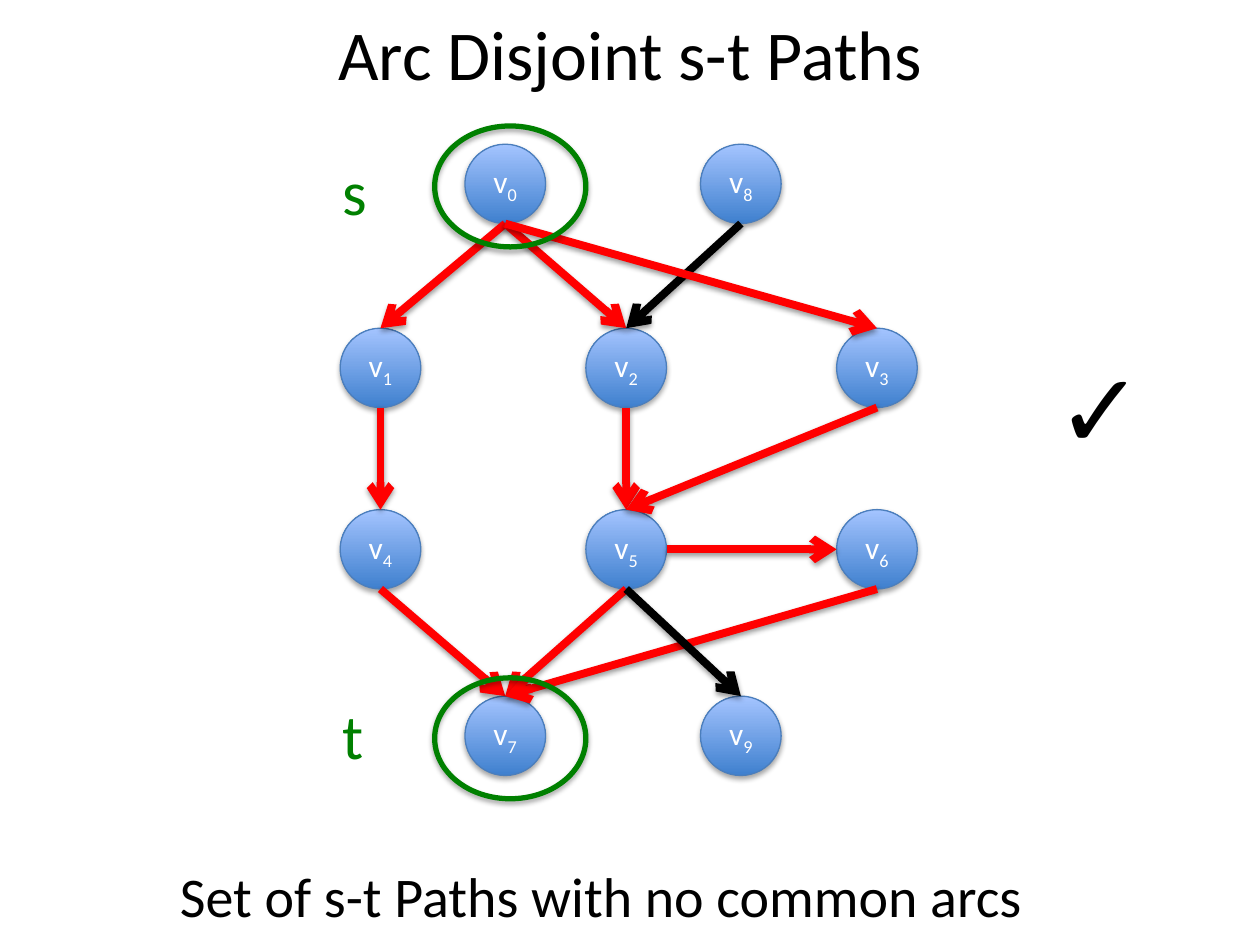
from lxml import etree
from pptx import Presentation
from pptx.dml.color import RGBColor
from pptx.enum import shapes, text
from pptx.oxml.ns import qn
from pptx.util import Inches, Pt

BLACK = RGBColor(0x00, 0x00, 0x00)
WHITE = RGBColor(0xFF, 0xFF, 0xFF)
RED = RGBColor(0xFF, 0x00, 0x00)
GREEN = RGBColor(0x00, 0x80, 0x00)
NODE_DARK = RGBColor(0x3F, 0x80, 0xCE)
NODE_LIGHT = RGBColor(0xA4, 0xC4, 0xFF)
NODE_EDGE = RGBColor(0x4B, 0x7E, 0xBC)

NODE_W, NODE_H = 0.64, 0.63
ROWS = (0.56, 2.02, 3.46, 4.94)
# Node centres relative to the graph box
NODES = {
    0: (1.39, ROWS[0]), 8: (3.26, ROWS[0]),
    1: (0.4, ROWS[1]), 2: (2.35, ROWS[1]), 3: (4.34, ROWS[1]),
    4: (0.4, ROWS[2]), 5: (2.35, ROWS[2]), 6: (4.34, ROWS[2]),
    7: (1.39, ROWS[3]), 9: (3.26, ROWS[3]),
}
ARCS = [
    (0, 1, RED), (1, 4, RED), (4, 7, RED), (0, 2, RED), (2, 5, RED),
    (5, 7, RED), (5, 6, RED), (8, 2, BLACK), (0, 3, RED), (6, 7, RED),
    (3, 5, RED), (5, 9, BLACK),
]
# End node, label, label top
TERMINALS = [(7, "t", 4.58), (0, "s", 0.26)]


def add_run(paragraph, words, size, color, font="Calibri"):
    run = paragraph.add_run()
    run.text = words
    run.font.size = Pt(size)
    run.font.name = font
    run.font.color.rgb = color
    return run


def add_shadow(shape, opacity, distance):
    """Put a soft black shadow below a shape or connector whose line is set."""
    properties = shape.element.spPr
    effects = properties.find(qn("a:effectLst"))
    if effects is None:
        effects = etree.SubElement(properties, qn("a:effectLst"))
    shadow = etree.SubElement(
        effects, qn("a:outerShdw"), blurRad=str(Pt(3.1)),
        dist=str(Pt(distance)), dir="5400000", rotWithShape="0")
    color = etree.SubElement(shadow, qn("a:srgbClr"), val=str(BLACK))
    etree.SubElement(color, qn("a:alpha"), val=str(opacity * 1000))


def add_oval(slide, x, y, width, height, color, weight):
    """Add an outlined ellipse centred on x, y."""
    oval = slide.shapes.add_shape(
        shapes.MSO_SHAPE.OVAL, Inches(x - width / 2), Inches(y - height / 2),
        Inches(width), Inches(height))
    oval.line.color.rgb = color
    oval.line.width = Pt(weight)
    oval.shadow.inherit = False
    add_shadow(oval, 35, 1.8)
    return oval


def add_node(slide, x, y, number):
    node = add_oval(slide, x, y, NODE_W, NODE_H, NODE_EDGE, 0.75)
    node.fill.gradient()
    node.fill.gradient_angle = 90
    for stop, color in zip(node.fill.gradient_stops, (NODE_DARK, NODE_LIGHT)):
        stop.color.rgb = color
    frame = node.text_frame
    frame.word_wrap = False
    frame.vertical_anchor = text.MSO_ANCHOR.MIDDLE
    name = frame.paragraphs[0]
    name.alignment = text.PP_ALIGN.CENTER
    add_run(name, "v", 18, WHITE)
    index = add_run(name, str(number), 18, WHITE)
    index.font._element.set("baseline", "-25000")


def add_arc(slide, x1, y1, x2, y2, color):
    """Join two node centres, side to side in a row, else bottom to top."""
    if y1 == y2:
        x1, x2 = x1 + NODE_W / 2, x2 - NODE_W / 2
    else:
        y1, y2 = y1 + NODE_H / 2, y2 - NODE_H / 2
    arc = slide.shapes.add_connector(
        shapes.MSO_CONNECTOR.STRAIGHT,
        Inches(x1), Inches(y1), Inches(x2), Inches(y2))
    arc.line.color.rgb = color
    arc.line.width = Pt(4.5)
    line = arc.element.spPr.find(qn("a:ln"))
    etree.SubElement(line, qn("a:tailEnd"), type="arrow")
    add_shadow(arc, 38, 1.6)


def add_label(slide, left, top, width, height, words, size, color,
              font="Calibri", wrap=False):
    label = slide.shapes.add_textbox(
        Inches(left), Inches(top), Inches(width), Inches(height))
    label.text_frame.word_wrap = wrap
    add_run(label.text_frame.paragraphs[0], words, size, color, font)


def add_title(slide, left, top, width, height):
    title = slide.shapes.title
    title.left, title.top = Inches(left), Inches(top)
    title.width, title.height = Inches(width), Inches(height)
    title.text_frame.vertical_anchor = text.MSO_ANCHOR.MIDDLE
    heading = title.text_frame.paragraphs[0]
    heading.alignment = text.PP_ALIGN.CENTER
    add_run(heading, "Arc Disjoint s-t Paths", 40, BLACK)


def add_graph(slide, left, top):
    centres = {n: (left + x, top + y) for n, (x, y) in NODES.items()}
    for number, centre in centres.items():
        add_node(slide, *centre, number)
    for start, end, color in ARCS:
        add_arc(slide, *centres[start], *centres[end], color)
    for number, name, label_top in TERMINALS:
        x, y = centres[number]
        ring = add_oval(slide, x + 0.04, y + 0.02, 1.2, 0.96, GREEN, 3)
        ring.fill.background()
        add_label(slide, left, top + label_top, 1.38, 0.71, name, 36, GREEN,
                  wrap=True)


def main():
    prs = Presentation()
    prs.slide_width, prs.slide_height = Inches(10), Inches(7.5)
    slide = prs.slides.add_slide(prs.slide_layouts[5])
    add_title(slide, 0.5, 0.06, 9, 0.71)
    add_label(slide, 1.33, 6.79, 7.66, 0.64,
              "Set of s-t Paths with no common arcs", 32, BLACK)
    add_graph(slide, 2.62, 0.9)
    add_label(slide, 8.29, 2.68, 0.84, 1.11, "✓", 60, BLACK, "Arial")
    prs.save("out.pptx")


if __name__ == "__main__":
    main()
